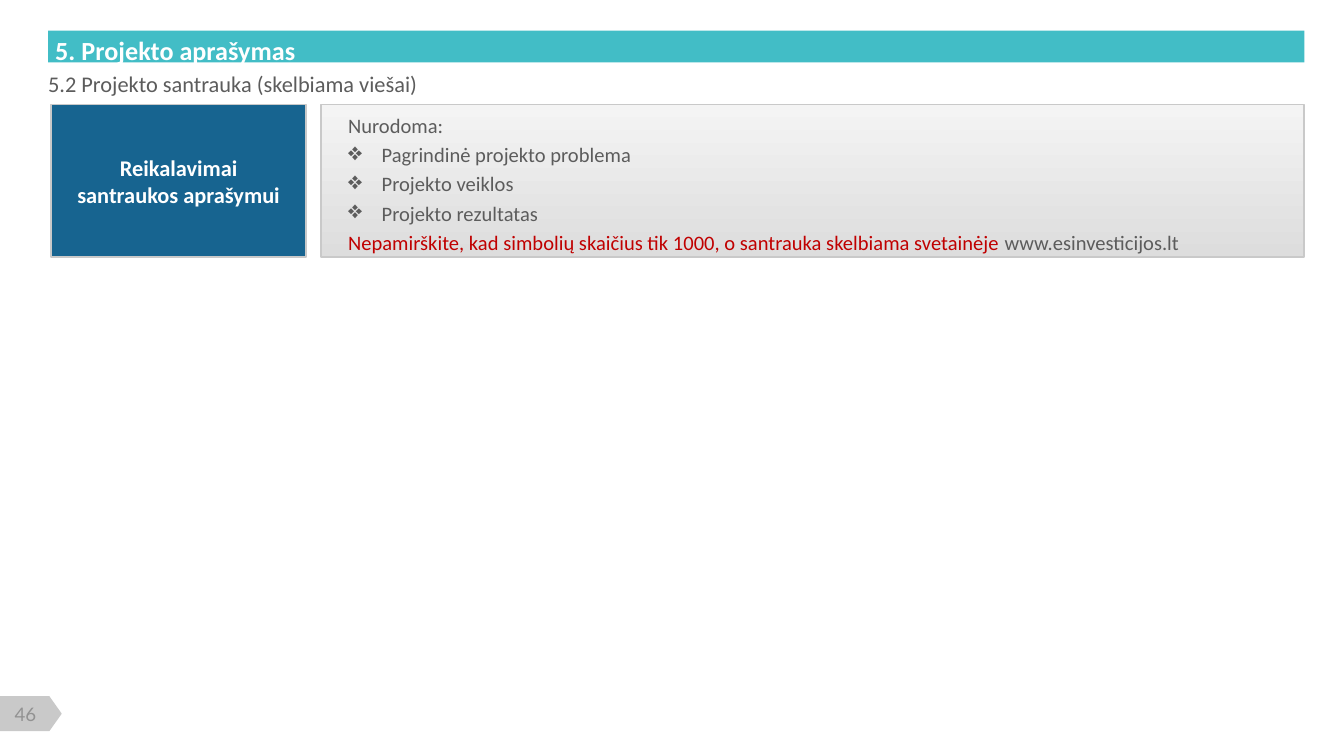
from lxml.etree import SubElement
from pptx import Presentation
from pptx.dml.color import RGBColor
from pptx.enum.shapes import MSO_SHAPE
from pptx.enum.text import MSO_ANCHOR, PP_ALIGN
from pptx.oxml.ns import qn
from pptx.util import Pt

TEAL, BLUE, SILVER = "42BDC6", "176490", "C9C9C9"
WHITE, GREY, PALE_GREY, RED = "FFFFFF", "5C5C5C", "929292", "C00000"


def rgb(value):
    return RGBColor.from_string(value)


class SlideBuilder:
    font = "Calibri"

    def __init__(self, slide):
        self.slide = slide

    def block(self, left, top, width, height, fill, border=None, preset=MSO_SHAPE.RECTANGLE):
        block = self.slide.shapes.add_shape(preset, Pt(left), Pt(top), Pt(width), Pt(height))
        block.shadow.inherit = False
        if isinstance(fill, tuple):
            block.fill.gradient()
            block.fill.gradient_angle = 90
            for stop, color in zip(block.fill.gradient_stops, fill):
                stop.color.rgb = rgb(color)
        else:
            block.fill.solid()
            block.fill.fore_color.rgb = rgb(fill)
        if border:
            block.line.color.rgb = rgb(border)
            block.line.width = Pt(1)
        else:
            block.line.fill.background()
        return block

    def frame(self, left, top, width, height, anchor=MSO_ANCHOR.MIDDLE):
        box = self.slide.shapes.add_textbox(Pt(left), Pt(top), Pt(width), Pt(height))
        frame = box.text_frame
        frame.word_wrap = True
        frame.vertical_anchor = anchor
        frame.margin_left = frame.margin_top = frame.margin_right = frame.margin_bottom = 0
        return frame

    def style(self, paragraph, size, color=None, bold=False, align=PP_ALIGN.LEFT, font=None):
        paragraph.alignment = align
        paragraph.font.name = font or self.font
        paragraph.font.size = Pt(size)
        paragraph.font.bold = bold
        if color:
            paragraph.font.color.rgb = rgb(color)

    def label(self, frame, text, size, color, **style):
        paragraph = frame.paragraphs[0]
        paragraph.text = text
        self.style(paragraph, size, color, **style)

    def bullet(self, paragraph, indent=18):
        properties = paragraph._p.get_or_add_pPr()
        properties.set("marL", str(Pt(indent)))
        properties.set("indent", str(-Pt(indent)))
        SubElement(properties, qn("a:buSzPct"), val="120000")
        SubElement(properties, qn("a:buChar"), char="❖")

    def requirements(self, frame, intro, items, reminder):
        lines = [[(intro, GREY)], *([(item, GREY)] for item in items), reminder]
        for index, line in enumerate(lines):
            paragraph = frame.add_paragraph() if index else frame.paragraphs[0]
            paragraph.space_after = Pt(2.5)
            if 0 < index <= len(items):
                self.bullet(paragraph)
            shared = line[0][1] if len(line) == 1 else None
            self.style(paragraph, 11, shared)
            for text, color in line:
                run = paragraph.add_run()
                run.text = text
                if not shared:
                    run.font.color.rgb = rgb(color)


def main():
    deck = Presentation()
    deck.slide_width, deck.slide_height = Pt(720), Pt(405)
    builder = SlideBuilder(deck.slides.add_slide(deck.slide_layouts[6]))

    page_tag = builder.block(7.2, 365.8, 18.7, 33.1, SILVER,
                             preset=MSO_SHAPE.FLOWCHART_OFFPAGE_CONNECTOR)
    page_tag.rotation = 270
    builder.label(builder.frame(1.6, 376.5, 24, 12.3), "46", 10, PALE_GREY,
                  align=PP_ALIGN.CENTER, font="Lato")

    builder.block(25.8, 16.4, 673, 17, TEAL)
    builder.label(builder.frame(29.6, 18.4, 396.6, 17), "5. Projekto aprašymas",
                  14, WHITE, bold=True)
    builder.label(builder.frame(25.8, 38, 659, 14), "5.2 Projekto santrauka (skelbiama viešai)",
                  12, GREY)

    topic = builder.block(27.4, 56, 136.6, 81.8, BLUE, SILVER).text_frame
    topic.word_wrap = True
    topic.vertical_anchor = MSO_ANCHOR.MIDDLE
    builder.label(topic, "Reikalavimai\vsantraukos aprašymui", 12, WHITE,
                  bold=True, align=PP_ALIGN.CENTER)

    builder.block(172.2, 56, 526.4, 81.8, ("DDDDDD", "F4F4F4"), SILVER)
    builder.requirements(
        builder.frame(186.5, 60.4, 490, 78.5, MSO_ANCHOR.TOP),
        "Nurodoma:",
        ["Pagrindinė projekto problema", "Projekto veiklos", "Projekto rezultatas"],
        [("Nepamirškite, kad simbolių skaičius tik 1000, o santrauka skelbiama svetainėje ", RED),
         ("www.esinvesticijos.lt", GREY)],
    )
    deck.save("out.pptx")


if __name__ == "__main__":
    main()
